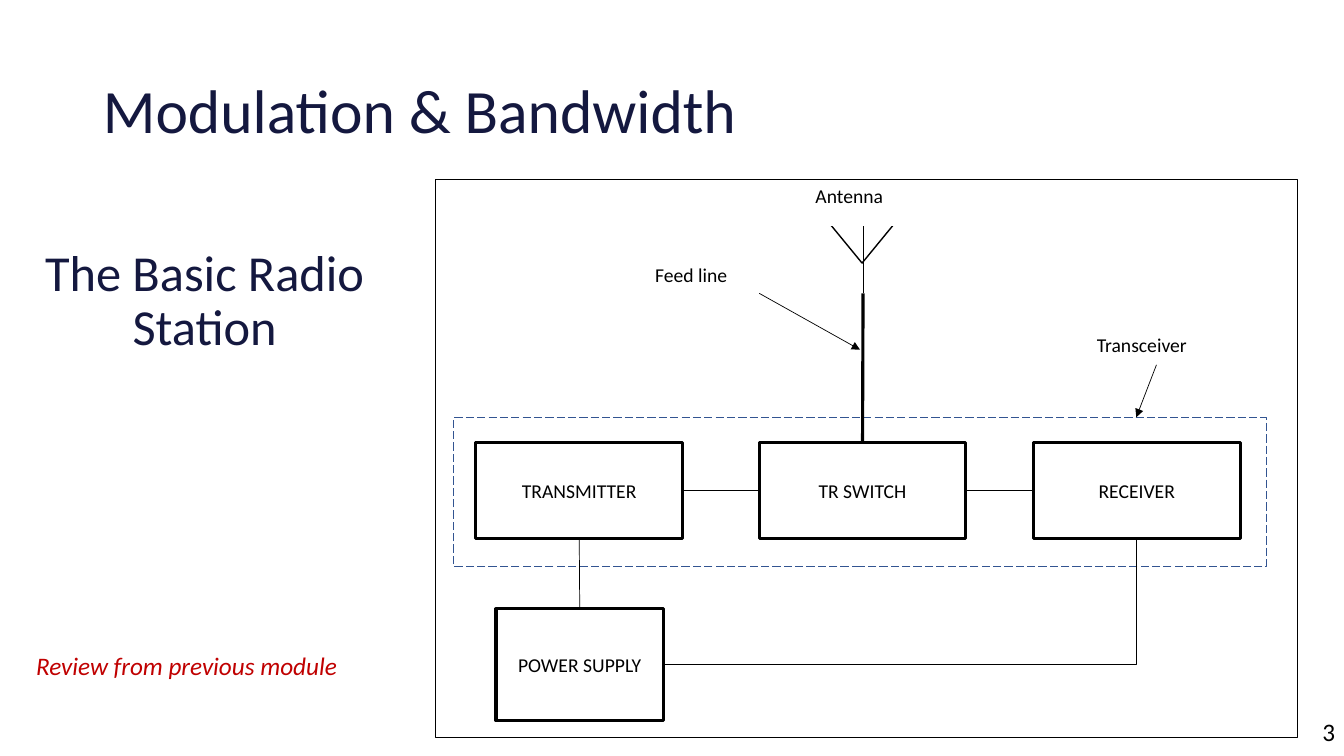
from lxml.etree import SubElement
from pptx import Presentation
from pptx.dml.color import RGBColor
from pptx.enum.dml import MSO_LINE
from pptx.enum.shapes import MSO_CONNECTOR, MSO_SHAPE
from pptx.enum.text import MSO_ANCHOR, MSO_AUTO_SIZE, PP_ALIGN
from pptx.oxml.ns import qn
from pptx.util import Inches, Pt

BLACK = RGBColor(0x00, 0x00, 0x00)
WHITE = RGBColor(0xFF, 0xFF, 0xFF)
NAVY = RGBColor(0x14, 0x18, 0x3F)
RED = RGBColor(0xC0, 0x00, 0x00)
BLUE = RGBColor(0x32, 0x54, 0x91)

TOP, BOTTOM, LEFT, RIGHT = 0, 2, 1, 3
UNIT_TOP = 4.39
UNIT_SIZE = (2.05, 0.95)
FEED_X = 8.56


def write(frame, text, size, color=BLACK, align=PP_ALIGN.LEFT,
          anchor=MSO_ANCHOR.TOP, italic=False, spacing=None):
    """Fill a text frame with one formatted paragraph."""
    frame.word_wrap = True
    frame.auto_size = MSO_AUTO_SIZE.NONE
    frame.vertical_anchor = anchor
    frame.text = text
    para = frame.paragraphs[0]
    para.alignment = align
    para.line_spacing = spacing
    para.font.name = "Calibri"
    para.font.size = Pt(size)
    para.font.italic = italic
    para.font.color.rgb = color


def add_label(page, text, left, top, width, height, size=14, **style):
    box = page.shapes.add_textbox(*map(Inches, (left, top, width, height)))
    write(box.text_frame, text, size, **style)


def add_outline(page, left, top, width, height, weight, color=BLACK,
                kind=MSO_SHAPE.RECTANGLE):
    """Add an unfilled shape with a plain border."""
    shape = page.shapes.add_shape(kind, *map(Inches, (left, top, width, height)))
    shape.shadow.inherit = False
    shape.fill.background()
    shape.line.color.rgb = color
    shape.line.width = Pt(weight)
    return shape


def add_unit(page, text, left, top, width, height):
    """Add a labelled block of the radio station."""
    unit = add_outline(page, left, top, width, height, 2.25)
    write(unit.text_frame, text, 14, align=PP_ALIGN.CENTER,
          anchor=MSO_ANCHOR.MIDDLE)
    return unit


def add_line(page, start, end, weight=0.5, kind=MSO_CONNECTOR.STRAIGHT):
    line = page.shapes.add_connector(kind, *map(Inches, (*start, *end)))
    line.line.color.rgb = BLACK
    line.line.width = Pt(weight)
    SubElement(line._element.spPr, qn("a:effectLst"))
    return line


def add_arrow(page, start, end):
    arrow = add_line(page, start, end)
    SubElement(arrow.line._get_or_add_ln(), qn("a:tailEnd"), type="triangle")


def link(page, first, first_side, second, second_side,
         kind=MSO_CONNECTOR.STRAIGHT):
    """Join two units at the middles of the given sides."""
    wire = add_line(page, (0, 0), (1, 1), kind=kind)
    wire.begin_connect(first, first_side)
    wire.end_connect(second, second_side)
    return wire


def add_antenna(page, switch):
    triangle = add_outline(page, 8.23, 2.22, 0.64, 0.39, 1,
                           kind=MSO_SHAPE.ISOSCELES_TRIANGLE)
    triangle.rotation = 180
    cover = add_outline(page, 8.05, 2.04, 1.12, 0.2, 1, WHITE)
    cover.fill.solid()
    cover.fill.fore_color.rgb = WHITE
    add_line(page, (FEED_X, 2.91), (FEED_X, 2.24))
    feed_line = add_line(page, (FEED_X, 2.91), (FEED_X, UNIT_TOP), 2.25)
    feed_line.end_connect(switch, TOP)


def add_station(page):
    add_outline(page, 4.32, 1.78, 8.55, 5.54, 1)
    transceiver = add_outline(page, 4.5, 4.14, 8.06, 1.48, 0.75, BLUE)
    transceiver.line.dash_style = MSO_LINE.LONG_DASH

    transmitter, switch, receiver = [
        add_unit(page, text, left, UNIT_TOP, *UNIT_SIZE)
        for text, left in (("TRANSMITTER", 4.72), ("TR SWITCH", 7.53),
                           ("RECEIVER", 10.25))
    ]
    supply = add_unit(page, "POWER SUPPLY", 4.92, 6.04, 1.66, 1.11)
    link(page, transmitter, RIGHT, switch, LEFT)
    link(page, switch, RIGHT, receiver, LEFT)
    link(page, supply, TOP, transmitter, BOTTOM)
    elbow = link(page, supply, RIGHT, receiver, BOTTOM, MSO_CONNECTOR.ELBOW)
    elbow._element.spPr.find(qn("a:prstGeom")).set("prst", "bentConnector2")

    add_antenna(page, switch)
    for text, left, top in (("Antenna", 7.99, 1.78), ("Feed line", 6.4, 2.56),
                            ("Transceiver", 10.78, 3.25)):
        add_label(page, text, left, top, 1.86, 0.45)
    add_arrow(page, (7.53, 2.91), (8.53, 3.47))
    add_arrow(page, (11.47, 3.62), (11.27, 4.14))


def main():
    deck = Presentation()
    deck.slide_width, deck.slide_height = Inches(13.33), Inches(7.5)
    page = deck.slides.add_slide(deck.slide_layouts[5])

    title = page.shapes.title
    title.left, title.top = Inches(0.92), Inches(0.4)
    title.width, title.height = Inches(11.5), Inches(1.45)
    write(title.text_frame, "Modulation & Bandwidth", 44, NAVY,
          anchor=MSO_ANCHOR.MIDDLE, spacing=0.9)

    add_station(page)
    add_label(page, "The Basic Radio Station", 0.26, 2.07, 3.54, 1.86, 36,
              color=NAVY, align=PP_ALIGN.CENTER, anchor=MSO_ANCHOR.MIDDLE,
              spacing=0.9)
    add_label(page, "Review from previous module", 0.26, 6.4, 3.46, 0.4, 18,
              color=RED, italic=True)
    add_label(page, "3", 12.66, 7.06, 0.68, 0.4, 18, align=PP_ALIGN.RIGHT)
    deck.save("out.pptx")


if __name__ == "__main__":
    main()
